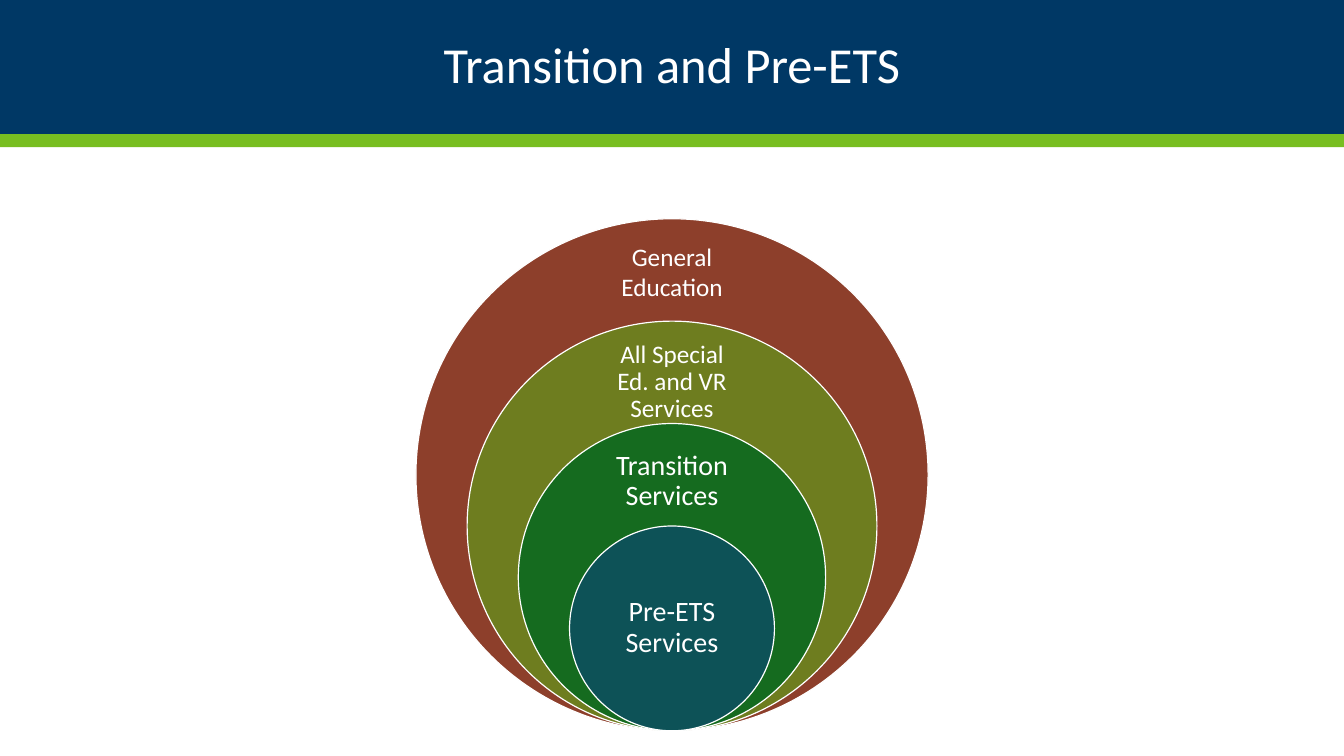
from dataclasses import dataclass

from pptx import Presentation
from pptx.dml.color import RGBColor
from pptx.enum.shapes import MSO_SHAPE
from pptx.enum.text import MSO_ANCHOR, MSO_AUTO_SIZE, PP_ALIGN
from pptx.util import Inches, Pt


@dataclass(frozen=True)
class Theme:
    """Colours, font and type sizes of the slide."""
    font: str = "Calibri"
    white: str = "FFFFFF"
    navy: str = "003865"
    lime: str = "78BE21"
    rust: str = "8D3F2B"
    olive: str = "6E7D1F"
    green: str = "156B1F"
    teal: str = "0D5257"
    title_size: int = 36
    outer_size: int = 18
    inner_size: int = 20
    outline: float = 0.85


THEME = Theme()
SLIDE_W, SLIDE_H = 13.33, 7.5
TITLE_H, STRIPE_H = 1.33, 0.13
CENTRE_X, CIRCLES_BOTTOM = SLIDE_W / 2, 7.25
OUTER_DIAMETER = 5.08
TITLE_INSETS, BOX_INSETS, RING_INSETS = (0.9, 0.05), (0.1, 0.05), (0.14, 0.14)

CIRCLES = [
    (1.0, THEME.rust),
    (0.8, THEME.olive),
    (0.6, THEME.green),
    (0.4, THEME.teal),
]

LABELS = [
    ("General Education", 2.34, 1.25, 0.71, THEME.outer_size, BOX_INSETS, 1.0),
    ("All Special Ed. and VR Services", 3.43, 1.42, 0.73, THEME.outer_size, RING_INSETS, 0.9),
    ("Transition Services", 4.43, 1.42, 0.69, THEME.inner_size, RING_INSETS, 0.9),
    ("Pre-ETS Services", 5.72, 1.44, 1.02, THEME.inner_size, RING_INSETS, 0.9),
]


def fill_solid(shape, colour):
    """Give a shape a plain fill."""
    shape.fill.solid()
    shape.fill.fore_color.rgb = RGBColor.from_string(colour)


def write_text(shape, text, size, insets, spacing):
    """Write one centred white paragraph into a shape."""
    tf = shape.text_frame
    tf.text = text
    tf.word_wrap = True
    tf.auto_size = MSO_AUTO_SIZE.NONE
    tf.vertical_anchor = MSO_ANCHOR.MIDDLE
    tf.margin_left = tf.margin_right = Inches(insets[0])
    tf.margin_top = tf.margin_bottom = Inches(insets[1])
    p = tf.paragraphs[0]
    p.alignment = PP_ALIGN.CENTER
    p.line_spacing = spacing
    font = p.runs[0].font
    font.name = THEME.font
    font.size = Pt(size)
    font.color.rgb = RGBColor.from_string(THEME.white)


def add_title(s, text):
    """Place the title in its full-width navy band."""
    title = s.shapes.title
    title.left, title.top = Inches(0), Inches(0)
    title.width, title.height = Inches(SLIDE_W), Inches(TITLE_H)
    fill_solid(title, THEME.navy)
    write_text(title, text, THEME.title_size, TITLE_INSETS, 0.9)


def add_stripe(s):
    """Draw the lime stripe under the title band."""
    stripe = s.shapes.add_shape(MSO_SHAPE.RECTANGLE, Inches(0), Inches(TITLE_H),
                                Inches(SLIDE_W), Inches(STRIPE_H))
    stripe.shadow.inherit = False
    fill_solid(stripe, THEME.lime)
    stripe.line.fill.background()


def add_circle(s, scale, colour):
    """Draw a circle standing on the common bottom point."""
    diameter = OUTER_DIAMETER * scale
    circle = s.shapes.add_shape(MSO_SHAPE.OVAL, Inches(CENTRE_X - diameter / 2),
                                Inches(CIRCLES_BOTTOM - diameter),
                                Inches(diameter), Inches(diameter))
    circle.shadow.inherit = False
    fill_solid(circle, colour)
    circle.line.color.rgb = RGBColor.from_string(THEME.white)
    circle.line.width = Pt(THEME.outline)


def add_label(s, text, top, width, height, size, insets, spacing):
    """Add a text box centred on the circles' axis."""
    box = s.shapes.add_textbox(Inches(CENTRE_X - width / 2), Inches(top),
                               Inches(width), Inches(height))
    write_text(box, text, size, insets, spacing)


def main():
    """Build and save the slide."""
    prs = Presentation()
    prs.slide_width, prs.slide_height = Inches(SLIDE_W), Inches(SLIDE_H)
    s = prs.slides.add_slide(prs.slide_layouts[5])
    add_title(s, "Transition and Pre-ETS")
    add_stripe(s)
    for circle in CIRCLES:
        add_circle(s, *circle)
    for label in LABELS:
        add_label(s, *label)
    prs.save("out.pptx")


if __name__ == "__main__":
    main()
